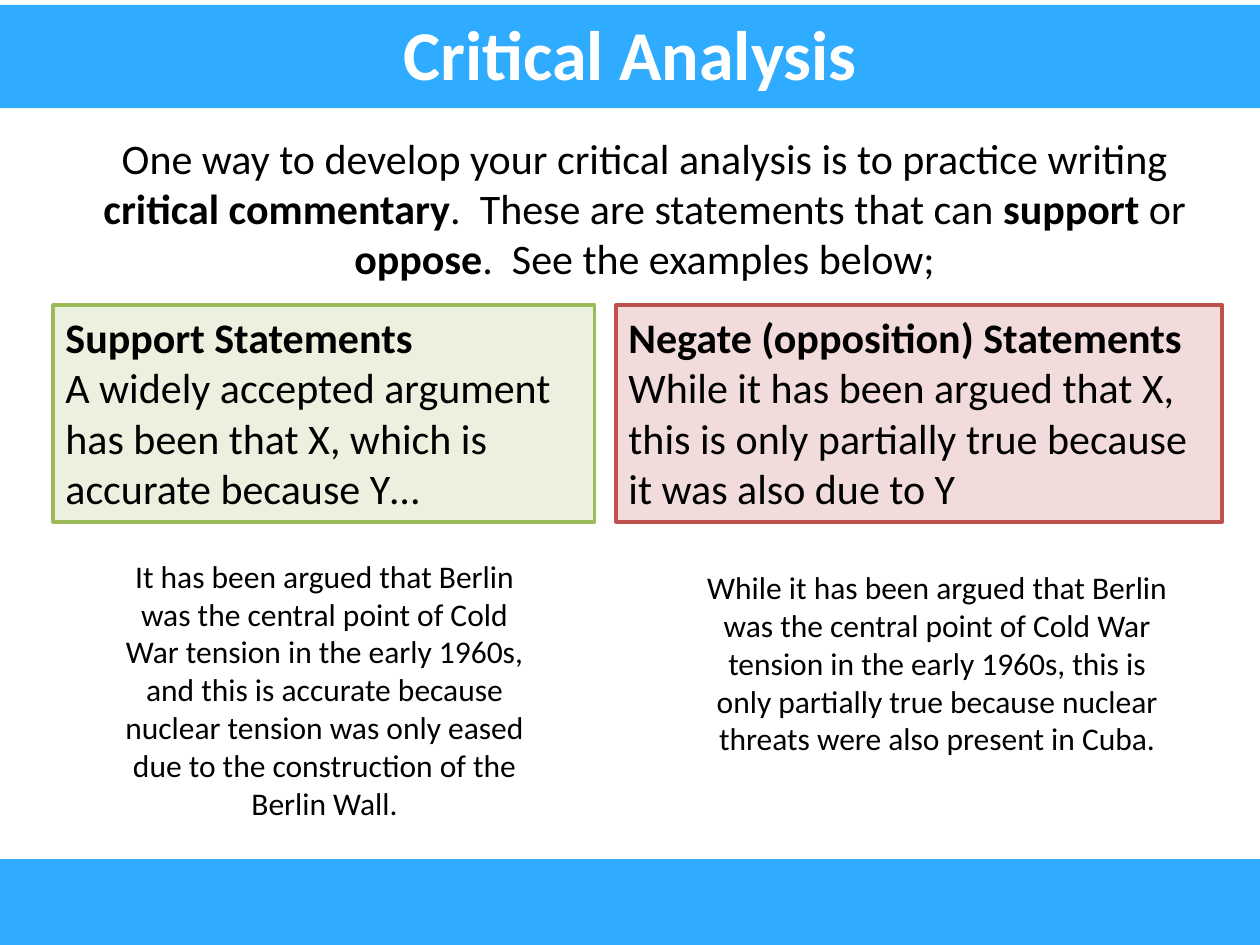
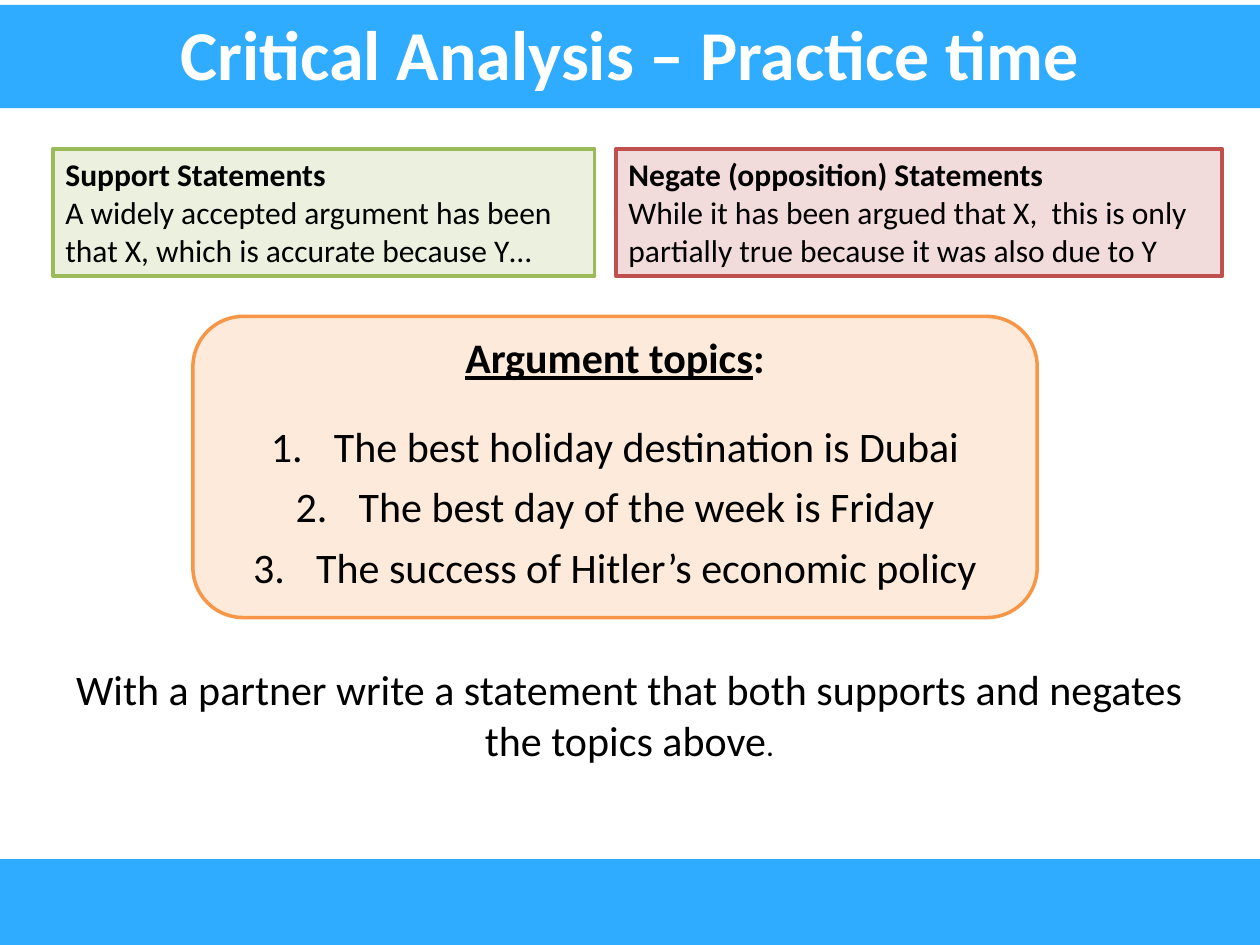
from lxml.etree import SubElement
from pptx import Presentation
from pptx.dml.color import RGBColor
from pptx.enum.shapes import MSO_SHAPE
from pptx.enum.text import MSO_ANCHOR, MSO_AUTO_SIZE, PP_ALIGN
from pptx.oxml.ns import qn
from pptx.util import Cm, Pt

FONT = "Calibri"
WIDE, HIGH = 25.4, 19.05
FOOT_TOP = 17.32
COLORS = {
    "band": "2FACFF", "white": "FFFFFF", "text": "000000",
    "green": "9BBB59", "mint": "EBF1DE",
    "red": "C0504D", "rose": "F2DCDB",
    "orange": "F79646", "peach": "FDEADA",
}

# A paragraph is a list of runs: (text, style), style "b" bold, "u" underlined
TITLES = ["Critical Analysis", "Critical Analysis – Practice time"]
INTRO = [[
    ("One way to develop your critical analysis is to practice writing ", ""),
    ("critical commentary", "b"),
    (".  These are statements that can ", ""),
    ("support ", "b"), ("or ", ""), ("oppose", "b"),
    (".  See the examples below;", ""),
]]
CARDS = [
    {"left": 1.07, "width": 10.92, "fill": "mint", "line": "green", "text": [
        [("Support Statements", "b")],
        [("A widely accepted argument has been that X, which is accurate "
          "because Y…", "")]]},
    {"left": 12.42, "width": 12.22, "fill": "rose", "line": "red", "text": [
        [("Negate (opposition) Statements", "b")],
        [("While it has been argued that X,  this is only partially true "
          "because it was also due to Y", "")]]},
]
SAMPLES = [
    ((2.01, 11.1, 9.07, 5.64),
     "It has been argued that Berlin was the central point of Cold War "
     "tension in the early 1960s, and this is accurate because nuclear "
     "tension was only eased due to the construction of the Berlin Wall."),
    ((13.94, 11.33, 9.91, 4.11),
     "While it has been argued that Berlin was the central point of Cold War "
     "tension in the early 1960s, this is only partially true because "
     "nuclear threats were also present in Cuba."),
]
HEAD = [("Argument topics", "bu"), (":", "b")]
TOPICS = [
    "The best holiday destination is Dubai",
    "The best day of the week is Friday",
    "The success of Hitler’s economic policy",
]
TASK = ("With a partner write a statement that both supports and negates "
        "the topics above")


def rgb(name):
    return RGBColor.from_string(COLORS[name])


def add_run(para, text, size, style="", color="text"):
    run = para.add_run()
    run.text = text
    font = run.font
    font.name, font.size = FONT, Pt(size)
    font.bold, font.underline = "b" in style, "u" in style
    font.color.rgb = rgb(color)


def write(shape, paras, size, align=PP_ALIGN.CENTER):
    frame = shape.text_frame
    frame.word_wrap = True
    frame.vertical_anchor = MSO_ANCHOR.TOP
    for i, runs in enumerate(paras):
        para = frame.add_paragraph() if i else frame.paragraphs[0]
        para.alignment = align
        for text, style in runs:
            add_run(para, text, size, style)
    return frame.paragraphs


def add_text(slide, box, paras, size):
    return write(slide.shapes.add_textbox(*map(Cm, box)), paras, size)


def add_box(slide, kind, box, fill, line=None):
    shape = slide.shapes.add_shape(kind, *map(Cm, box))
    shape.shadow.inherit = False
    shape.fill.solid()
    shape.fill.fore_color.rgb = rgb(fill)
    if line:
        shape.line.color.rgb = rgb(line)
        shape.line.width = Pt(2)
    else:
        shape.line.fill.background()
    return shape


def number(para):
    """Turn a paragraph into an item of a numbered list."""
    props = para._p.get_or_add_pPr()
    props.set("marL", str(Cm(1.27)))
    props.set("indent", str(-Cm(1.27)))
    SubElement(props, qn("a:buFont"), typeface="+mj-lt")
    SubElement(props, qn("a:buAutoNum"), type="arabicPeriod")


def add_slide(deck, text):
    """Add a slide with the footer band and the title band."""
    slide = deck.slides.add_slide(deck.slide_layouts[5])
    add_box(slide, MSO_SHAPE.RECTANGLE,
            (0, FOOT_TOP, WIDE, HIGH - FOOT_TOP), "band")
    title = slide.shapes.title
    title.left, title.top, title.width, title.height = map(
        Cm, (0, 0.1, WIDE, 2.08))
    title.fill.solid()
    title.fill.fore_color.rgb = rgb("band")
    frame = title.text_frame
    frame.auto_size = MSO_AUTO_SIZE.NONE
    frame.vertical_anchor = MSO_ANCHOR.MIDDLE
    frame.margin_left = frame.margin_right = Cm(0.28)
    frame.margin_top = frame.margin_bottom = Cm(0.15)
    para = frame.paragraphs[0]
    para.alignment = PP_ALIGN.CENTER
    para.line_spacing = 0.93
    add_run(para, text, 40, "b", "white")
    return slide


def add_cards(slide, top, height, size):
    for card in CARDS:
        box = (card["left"], top, card["width"], height)
        shape = add_box(slide, MSO_SHAPE.RECTANGLE, box,
                        card["fill"], card["line"])
        write(shape, card["text"], size, PP_ALIGN.LEFT)


def add_topics(slide):
    panel = add_box(slide, MSO_SHAPE.ROUNDED_RECTANGLE,
                    (3.89, 6.38, 17.02, 6.07), "peach", "orange")
    head, *items = write(panel, [HEAD] + [[(t, "")] for t in TOPICS], 24)
    head.line_spacing = 0.9
    for i, item in enumerate(items):
        item.line_spacing = 0.9
        item.space_before = Pt(8.5 if i else 25)
        number(item)


def main():
    deck = Presentation()
    deck.slide_width, deck.slide_height = Cm(WIDE), Cm(HIGH)

    theory = add_slide(deck, TITLES[0])
    add_text(theory, (1.07, 2.54, 23.85, 3.33), INTRO, 24)
    add_cards(theory, 6.15, 4.37, 24)
    for box, text in SAMPLES:
        add_text(theory, box, [[(text, "")]], 18)

    drill = add_slide(deck, TITLES[1])
    add_cards(drill, 3, 2.57, 18)
    add_topics(drill)
    task = add_text(drill, (0.94, 13.26, 23.5, 2.31), [[(TASK, "")]], 24)
    add_run(task[0], ".", 18)

    deck.save("out.pptx")


if __name__ == "__main__":
    main()
